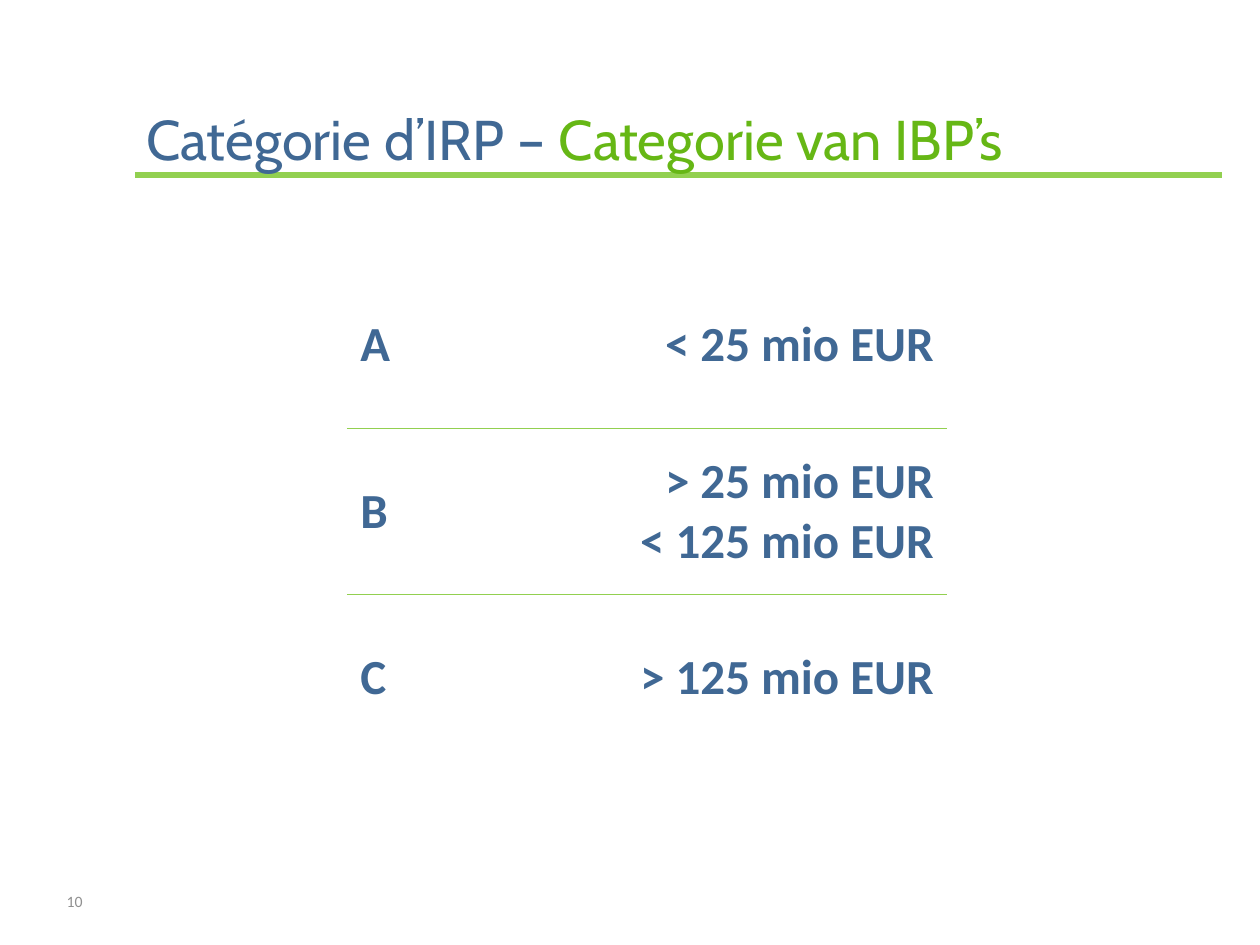
from dataclasses import dataclass

from lxml.etree import SubElement as Sub
from pptx import Presentation
from pptx.dml.color import RGBColor as Rgb
from pptx.enum.text import MSO_ANCHOR as Anchor, PP_ALIGN as Align
from pptx.oxml.ns import qn
from pptx.util import Inches, Pt

COLORS = {"blue": "406894", "green": "66B715", "line": "92D050",
          "white": "FFFFFF", "gray": "909090"}


@dataclass
class Band:
    name: str
    limits: list[str]


BANDS = [
    Band("A", ["< 25 mio EUR"]),
    Band("B", ["> 25 mio EUR", "< 125 mio EUR"]),
    Band("C", ["> 125 mio EUR"]),
]


def add_run(para, text: str, size: float, color: str,
            face: str = "Calibri", bold: bool = False) -> None:
    run = para.add_run()
    run.text = text
    font = run.font
    font.name, font.size, font.bold = face, Pt(size), bold
    font.color.rgb = Rgb.from_string(COLORS[color])


def add_edge(cell, side: str, color: str) -> None:
    edge = Sub(cell._tc.get_or_add_tcPr(), qn(f"a:ln{side}"), w=str(Pt(1)))
    fill = Sub(edge, qn("a:solidFill"))
    Sub(fill, qn("a:srgbClr"), val=COLORS[color])


def fill_cell(cell, lines: list[str], align: Align, top: str, base: str) -> None:
    cell.vertical_anchor = Anchor.MIDDLE
    frame = cell.text_frame
    for i, line in enumerate(lines):
        para = frame.add_paragraph() if i else frame.paragraphs[0]
        para.alignment = align
        add_run(para, line, 28, "blue", bold=True)
    # Borders come before the fill in the cell properties
    for side, color in zip("LRTB", ("white", "white", top, base)):
        add_edge(cell, side, color)
    cell.fill.background()


def add_bands(slide, bands: list[Band]) -> None:
    table = slide.shapes.add_table(len(bands), 2, Inches(2.76), Inches(2.08),
                                   Inches(4.75), Inches(3.96)).table
    table.first_row = table.horz_banding = False
    for col, width in zip(table.columns, (0.87, 3.88)):
        col.width = Inches(width)
    last = len(bands) - 1
    for i, band in enumerate(bands):
        top = "line" if i else "white"
        base = "line" if i < last else "white"
        fill_cell(table.cell(i, 0), [band.name], Align.LEFT, top, base)
        fill_cell(table.cell(i, 1), band.limits, Align.RIGHT, top, base)


def main() -> None:
    deck = Presentation()
    deck.slide_width, deck.slide_height = Inches(10), Inches(7.5)
    slide = deck.slides.add_slide(deck.slide_layouts[5])

    # Rule under the title, kept behind it
    rule = slide.shapes.add_connector(1, Inches(1.07), Inches(1.39),
                                      Inches(9.7), Inches(1.39))
    rule.line.color.rgb = Rgb.from_string(COLORS["line"])
    rule.line.width = Pt(3)
    Sub(rule._element.spPr, qn("a:effectLst"))

    # Title
    title = slide.shapes.title
    title.left, title.top = Inches(1.06), Inches(0.71)
    title.width, title.height = Inches(8.62), Inches(0.84)
    title._element.addprevious(rule._element)
    title.text_frame.vertical_anchor = Anchor.MIDDLE
    para = title.text_frame.paragraphs[0]
    para.alignment, para.line_spacing = Align.LEFT, 0.9
    add_run(para, "Catégorie d’IRP – ", 32, "blue", "Cabin")
    add_run(para, "Categorie van IBP’s", 32, "green", "Cabin")

    # Size bands
    add_bands(slide, BANDS)

    # Page number
    page = slide.shapes.add_textbox(Inches(0.43), Inches(6.95),
                                    Inches(2.25), Inches(0.4)).text_frame
    page.word_wrap = True
    page.vertical_anchor = Anchor.MIDDLE
    add_run(page.paragraphs[0], "10", 9, "gray")

    deck.save("out.pptx")


if __name__ == "__main__":
    main()
